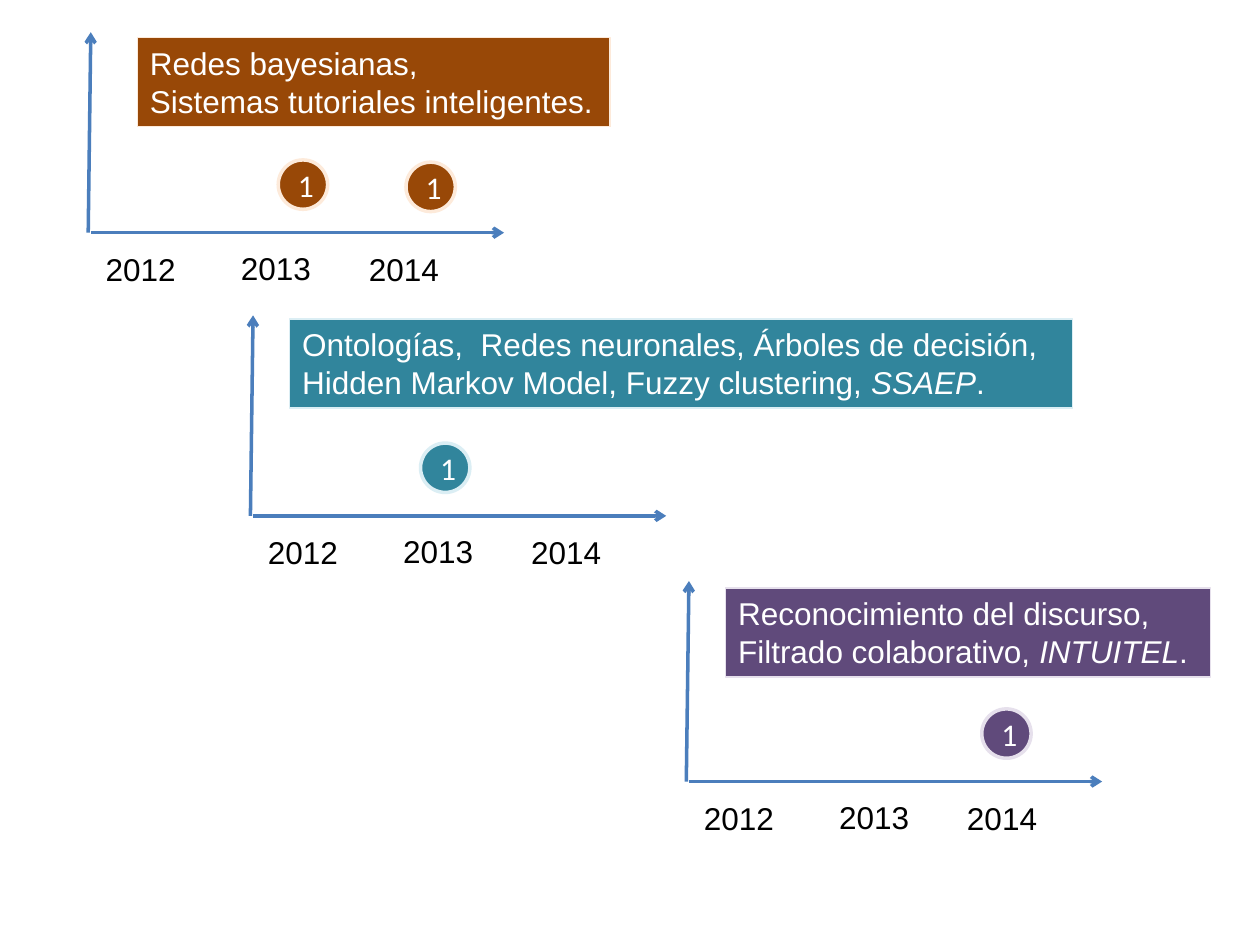
from lxml import etree
from pptx import Presentation
from pptx import util as u
from pptx.dml.color import RGBColor
from pptx.enum import shapes, text
from pptx.oxml.ns import qn

COLOURS = {
    "axis": "4B7EBC", "label": "000000", "light": "FFFFFF",
    "brown": "984807", "brown_edge": "FDEADA",
    "teal": "31859C", "teal_edge": "DBEEF4",
    "purple": "604A7B", "purple_edge": "E6E0EC",
}

# Offsets in points from the origin of a timeline
YEARS = [("2012", 2.9, 6.3), ("2013", 80.2, 5.6), ("2014", 153.3, 6.3)]

# Banner: left, top, width. Bubbles: left, top. Italic spans are marked True.
TIMELINES = [
    {
        "origin": (50.4, 133), "colour": "brown",
        "banner": (78.6, 21.6, 270),
        "lines": [[("Redes bayesianas,", False)],
                  [("Sistemas tutoriales inteligentes.", False)]],
        "bubbles": [(159, 91.4), (232, 92.7)],
    },
    {
        "origin": (143.1, 294.8), "colour": "teal",
        "banner": (165.6, 182.3, 447.2),
        "lines": [[("Ontologías,  Redes neuronales, Árboles de decisión,", False)],
                  [("Hidden Markov Model, Fuzzy clustering, ", False),
                   ("SSAEP", True), (".", False)]],
        "bubbles": [(240.3, 253.2)],
    },
    {
        "origin": (392.2, 446.6), "colour": "purple",
        "banner": (414.7, 336, 277),
        "lines": [[("Reconocimiento del discurso,", False)],
                  [("Filtrado colaborativo, ", False),
                   ("INTUITEL", True), (".", False)]],
        "bubbles": [(561, 405.1)],
    },
]


class Painter:
    size = u.Pt(18)

    def __init__(self, page):
        self.page = page
        self.group = None

    def colour(self, name):
        return RGBColor.from_string(COLOURS[name])

    def style(self, para, font_name, colour):
        para.font.name = font_name
        para.font.size = self.size
        para.font.color.rgb = self.colour(colour)

    def arrow(self, *ends):
        line = self.group.shapes.add_connector(
            shapes.MSO_CONNECTOR.STRAIGHT, *map(u.Pt, ends))
        line.line.color.rgb = self.colour("axis")
        line.line.width = u.Pt(2)
        etree.SubElement(line.line._get_or_add_ln(), qn("a:tailEnd"), type="arrow")
        etree.SubElement(line._element.spPr, qn("a:effectLst"))

    def label(self, words, left, top):
        box = self.group.shapes.add_textbox(u.Pt(left), u.Pt(top), u.Pt(54.6), u.Pt(29.1))
        box.text_frame.word_wrap = False
        box.text_frame.auto_size = text.MSO_AUTO_SIZE.SHAPE_TO_FIT_TEXT
        para = box.text_frame.paragraphs[0]
        para.text = words
        self.style(para, "Arial", "label")

    def filled(self, kind, bounds, colour, edge):
        shape = self.group.shapes.add_shape(kind, *map(u.Pt, bounds))
        shape.shadow.inherit = False
        shape.fill.solid()
        shape.fill.fore_color.rgb = self.colour(colour)
        shape.line.color.rgb = self.colour(colour + "_edge")
        shape.line.width = u.Pt(edge)
        return shape

    def bubble(self, words, left, top, colour):
        shape = self.filled(shapes.MSO_SHAPE.OVAL, (left, top, 28.2, 28.2), colour, 2)
        shape.text_frame.vertical_anchor = text.MSO_ANCHOR.MIDDLE
        para = shape.text_frame.paragraphs[0]
        para.text = words
        para.alignment = text.PP_ALIGN.CENTER
        self.style(para, "Calibri", "light")

    def banner(self, lines, left, top, width, colour):
        box = self.filled(shapes.MSO_SHAPE.RECTANGLE, (left, top, width, 50.9), colour, 0.75)
        frame = box.text_frame
        frame.word_wrap = True
        frame.vertical_anchor = text.MSO_ANCHOR.TOP
        for index, spans in enumerate(lines):
            para = frame.add_paragraph() if index else frame.paragraphs[0]
            para.alignment = text.PP_ALIGN.LEFT
            self.style(para, "Arial", "light")
            for words, italic in spans:
                span = para.add_run()
                span.text = words
                if italic:
                    span.font.italic = True

    def timeline(self, origin, colour, banner, lines, bubbles):
        """Draw one grouped pair of axes with its years, banner and counts."""
        self.group = self.page.shapes.add_group_shape()
        x, y = origin
        self.arrow(x, y, x + 1.5, y - 114.6)
        self.arrow(x + 1.5, y, x + 237.6, y)
        for year, dx, dy in YEARS:
            self.label(year, x + dx, y + dy)
        self.banner(lines, *banner, colour)
        for left, top in bubbles:
            self.bubble("1", left, top, colour)


def main():
    deck = Presentation()
    deck.slide_width, deck.slide_height = u.Pt(720), u.Pt(540)
    painter = Painter(deck.slides.add_slide(deck.slide_layouts[6]))
    for timeline in TIMELINES:
        painter.timeline(**timeline)
    deck.save("out.pptx")


if __name__ == "__main__":
    main()
